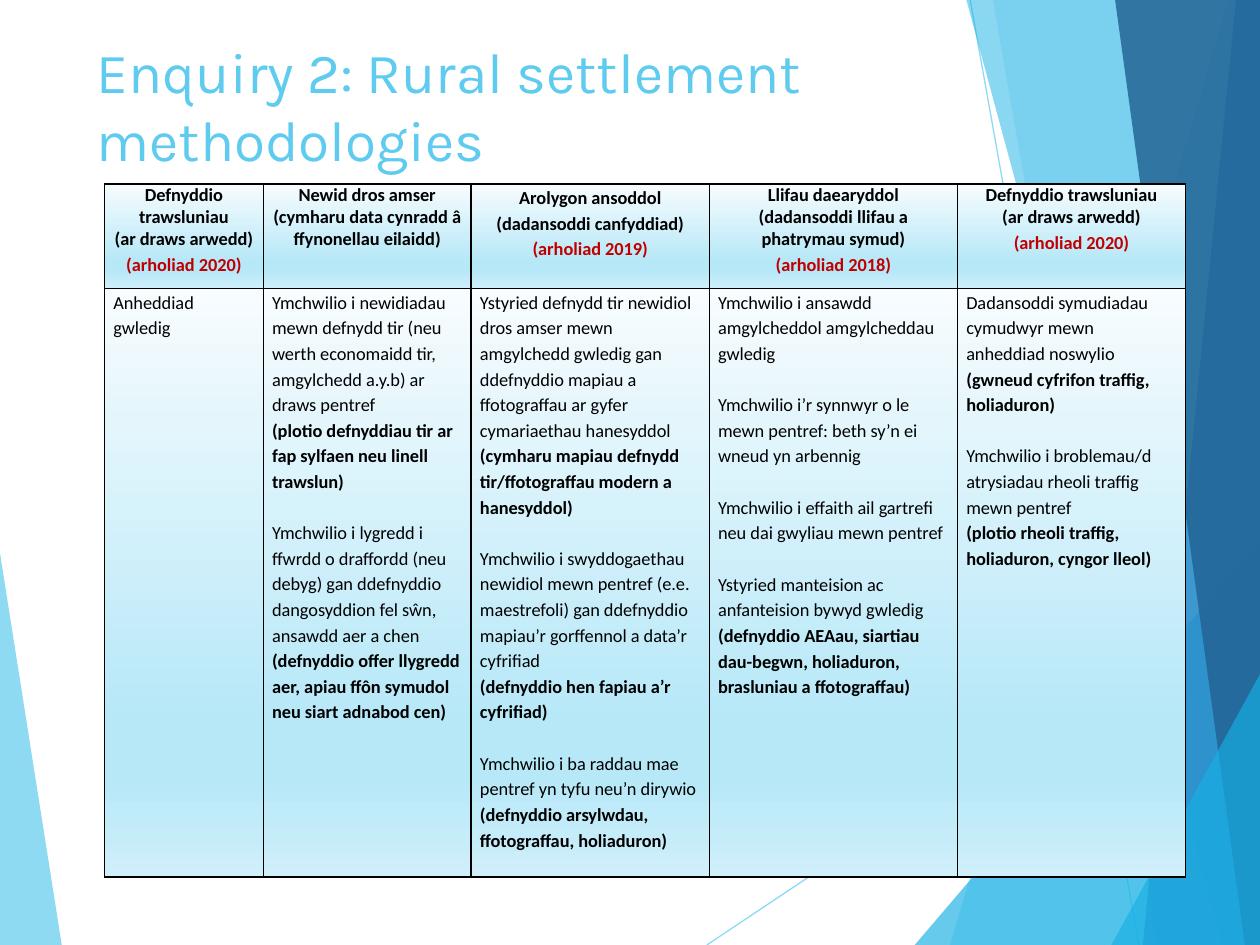
import pptx
import pptx.util
import pptx.dml.color
import pptx.enum.shapes
import pptx.enum.text
import pptx.oxml
import pptx.oxml.ns
from lxml import etree

Inches = pptx.util.Inches
Pt = pptx.util.Pt
CENTER = pptx.enum.text.PP_ALIGN.CENTER
LEFT = pptx.enum.text.PP_ALIGN.LEFT

COLORS = {
    "sky": "5FCBEF", "cyan": "17B0E4", "blue": "2E83C3", "navy": "226292",
    "text": "000000", "exam": "C00000", "border": "000000",
}
GRADIENT = [(0, "F7FCFE"), (74, "B7E8F8"), (83, "B7E8F8"), (100, "CFEFFA")]

LINES = [((5.61, 7.5), (10, 4.57)), ((7.7, 0), (9.04, 7.5))]
FACETS = [
    ("sky", 70, [(0, 4.39), (0.49, 7.5), (0, 7.5)]),
    ("sky", 36, [(9.75, 0), (7.54, 7.5), (10, 7.5), (10, 0)]),
    ("sky", 20, [(7.88, 0), (9.19, 7.5), (10, 7.5), (10, 0)]),
    ("cyan", 66, [(7.26, 7.5), (10, 4.29), (10, 7.5)]),
    ("cyan", 50, [(7.67, 0), (9.7, 7.5), (10, 7.5), (10, 0)]),
    ("blue", 70, [(9.81, 0), (9.07, 7.5), (10, 7.5), (10, 0)]),
    ("navy", 82, [(8.85, 0), (9.88, 7.5), (10, 7.5), (10, 0)]),
    ("cyan", 66, [(8.82, 7.5), (10, 5.35), (10, 7.5)]),
]

COLUMNS = [1.26, 1.65, 1.89, 1.97, 1.81]
ROWS = [0.83, 4.67]
HEADERS = [
    (["Defnyddio trawsluniau", "(ar draws arwedd)"], "(arholiad 2020)", 1),
    (["Newid dros amser", "(cymharu data cynradd â ffynonellau eilaidd)"], None, 1),
    (["Arolygon ansoddol", "(dadansoddi canfyddiad)"], "(arholiad 2019)", 1.15),
    (["Llifau daearyddol", "(dadansoddi llifau a phatrymau symud)"], "(arholiad 2018)", 1),
    (["Defnyddio trawsluniau", "(ar draws arwedd)"], "(arholiad 2020)", 1),
]
BODIES = [
    [("Anheddiad gwledig", None)],
    [("Ymchwilio i newidiadau mewn defnydd tir (neu werth economaidd tir, amgylchedd a.y.b) ar draws pentref",
      "(plotio defnyddiau tir ar fap sylfaen neu linell trawslun)"),
     ("Ymchwilio i lygredd i ffwrdd o draffordd (neu debyg) gan ddefnyddio dangosyddion fel sŵn, ansawdd aer a chen",
      "(defnyddio offer llygredd aer, apiau ffôn symudol neu siart adnabod cen)")],
    [("Ystyried defnydd tir newidiol dros amser mewn amgylchedd gwledig gan ddefnyddio mapiau a ffotograffau "
      "ar gyfer cymariaethau hanesyddol",
      "(cymharu mapiau defnydd tir/ffotograffau modern a hanesyddol)"),
     ("Ymchwilio i swyddogaethau newidiol mewn pentref (e.e. maestrefoli) gan ddefnyddio mapiau’r gorffennol "
      "a data’r cyfrifiad",
      "(defnyddio hen fapiau a’r cyfrifiad)"),
     ("Ymchwilio i ba raddau mae pentref yn tyfu neu’n dirywio",
      "(defnyddio arsylwdau, ffotograffau, holiaduron)")],
    [("Ymchwilio i ansawdd amgylcheddol amgylcheddau gwledig", None),
     ("Ymchwilio i’r synnwyr o le mewn pentref: beth sy’n ei wneud yn arbennig", None),
     ("Ymchwilio i effaith ail gartrefi neu dai gwyliau mewn pentref", None),
     ("Ystyried manteision ac anfanteision bywyd gwledig",
      "(defnyddio AEAau, siartiau dau-begwn, holiaduron, brasluniau a ffotograffau)")],
    [("Dadansoddi symudiadau cymudwyr mewn anheddiad noswylio",
      "(gwneud cyfrifon traffig, holiaduron)"),
     ("Ymchwilio i broblemau/d atrysiadau rheoli traffig mewn pentref",
      "(plotio rheoli traffig, holiaduron, cyngor lleol)")],
]


def rgb(name):
    return pptx.dml.color.RGBColor.from_string(COLORS[name])


def set_all(target, values):
    for name, value in values.items():
        setattr(target, name, value)


def set_alpha(shape, percent):
    for color in shape._element.spPr.iter(pptx.oxml.ns.qn("a:srgbClr")):
        etree.SubElement(color, pptx.oxml.ns.qn("a:alpha"), val=str(percent * 1000))


def write_paragraphs(frame, entries):
    for index, (text, para_format, font_format, color) in enumerate(entries):
        para = frame.paragraphs[0] if index == 0 else frame.add_paragraph()
        set_all(para, para_format)
        span = para.add_run()
        span.text = text
        set_all(span.font, font_format)
        span.font.color.rgb = rgb(color)


def add_backdrop(page, box):
    left, top = box[:2]

    def place(point):
        return Inches(left + point[0]), Inches(top + point[1])

    def add_facet(color, alpha, points):
        corners = [place(point) for point in points]
        builder = page.shapes.build_freeform(*corners[0], scale=1.0)
        builder.add_line_segments(corners[1:], close=True)
        facet = builder.convert_to_shape()
        facet.shadow.inherit = False
        facet.fill.solid()
        facet.fill.fore_color.rgb = rgb(color)
        facet.line.fill.background()
        set_alpha(facet, alpha)

    add_facet(*FACETS[0])
    for start, end in LINES:
        line = page.shapes.add_connector(
            pptx.enum.shapes.MSO_CONNECTOR.STRAIGHT, *place(start), *place(end))
        line.line.width = Pt(0.75)
        line.line.color.rgb = rgb("sky")
        set_alpha(line, 70)
        etree.SubElement(line._element.spPr, pptx.oxml.ns.qn("a:effectLst"))
    for facet in FACETS[1:]:
        add_facet(*facet)


def add_title(page, box):
    frame = page.shapes.add_textbox(*map(Inches, box)).text_frame
    set_all(frame, {"word_wrap": True, "vertical_anchor": pptx.enum.text.MSO_ANCHOR.MIDDLE})
    write_paragraphs(frame, [("Enquiry 2: Rural settlement methodologies", {},
                              {"name": "Karla", "size": Pt(32.4)}, "sky")])


def style_cell(cell, side_margin):
    set_all(cell, {"margin_left": Inches(side_margin), "margin_right": Inches(side_margin),
                   "margin_top": 0, "margin_bottom": 0})
    namespace = pptx.oxml.ns.nsdecls("a")
    properties = cell._tc.get_or_add_tcPr()
    for side in ("lnL", "lnR", "lnT", "lnB"):
        properties.append(pptx.oxml.parse_xml(
            f'<a:{side} {namespace} w="12700"><a:solidFill><a:srgbClr val="{COLORS["border"]}"/>'
            f'</a:solidFill><a:prstDash val="solid"/></a:{side}>'))
    stops = "".join(f'<a:gs pos="{position * 1000}"><a:srgbClr val="{color}"/></a:gs>'
                    for position, color in GRADIENT)
    properties.append(pptx.oxml.parse_xml(
        f'<a:gradFill {namespace}><a:gsLst>{stops}</a:gsLst><a:lin ang="5400000" scaled="0"/></a:gradFill>'))


def header_entries(lines, exam, spacing):
    font = {"name": "Calibri", "size": Pt(10.5), "bold": True}
    entries = [(text, {"alignment": CENTER, "line_spacing": spacing}, font, "text") for text in lines]
    if exam:
        entries.append((exam, {"alignment": CENTER, "line_spacing": 1.15}, font, "exam"))
    return entries


def body_entries(blocks):
    entries = []
    for index, block in enumerate(blocks):
        for bold, text in enumerate(block):
            if text:
                gap = Pt(14.7) if index and not bold else Pt(0)
                entries.append((text, {"alignment": LEFT, "line_spacing": 1.15, "space_before": gap},
                                {"name": "Calibri", "size": Pt(10.5), "bold": bool(bold)}, "text"))
    return entries


def add_methods_table(page, box):
    table = page.shapes.add_table(len(ROWS), len(COLUMNS), *map(Inches, box)).table
    set_all(table, {"first_row": False, "horz_banding": False})
    for row, height in zip(table.rows, ROWS):
        row.height = Inches(height)
    for index, width in enumerate(COLUMNS):
        table.columns[index].width = Inches(width)
        contents = (header_entries(*HEADERS[index]), body_entries(BODIES[index]))
        for row, (entries, margin) in enumerate(zip(contents, (0.06, 0.07))):
            cell = table.cell(row, index)
            style_cell(cell, margin)
            write_paragraphs(cell.text_frame, entries)


def main():
    deck = pptx.Presentation()
    set_all(deck, {"slide_width": Inches(10), "slide_height": Inches(7.5)})
    page = deck.slides.add_slide(deck.slide_layouts[6])
    add_backdrop(page, (0, 0, 10, 7.5))
    add_title(page, (0.67, 0.21, 6.93, 1.25))
    add_methods_table(page, (0.83, 1.46, sum(COLUMNS), sum(ROWS)))
    deck.save("out.pptx")


if __name__ == "__main__":
    main()
